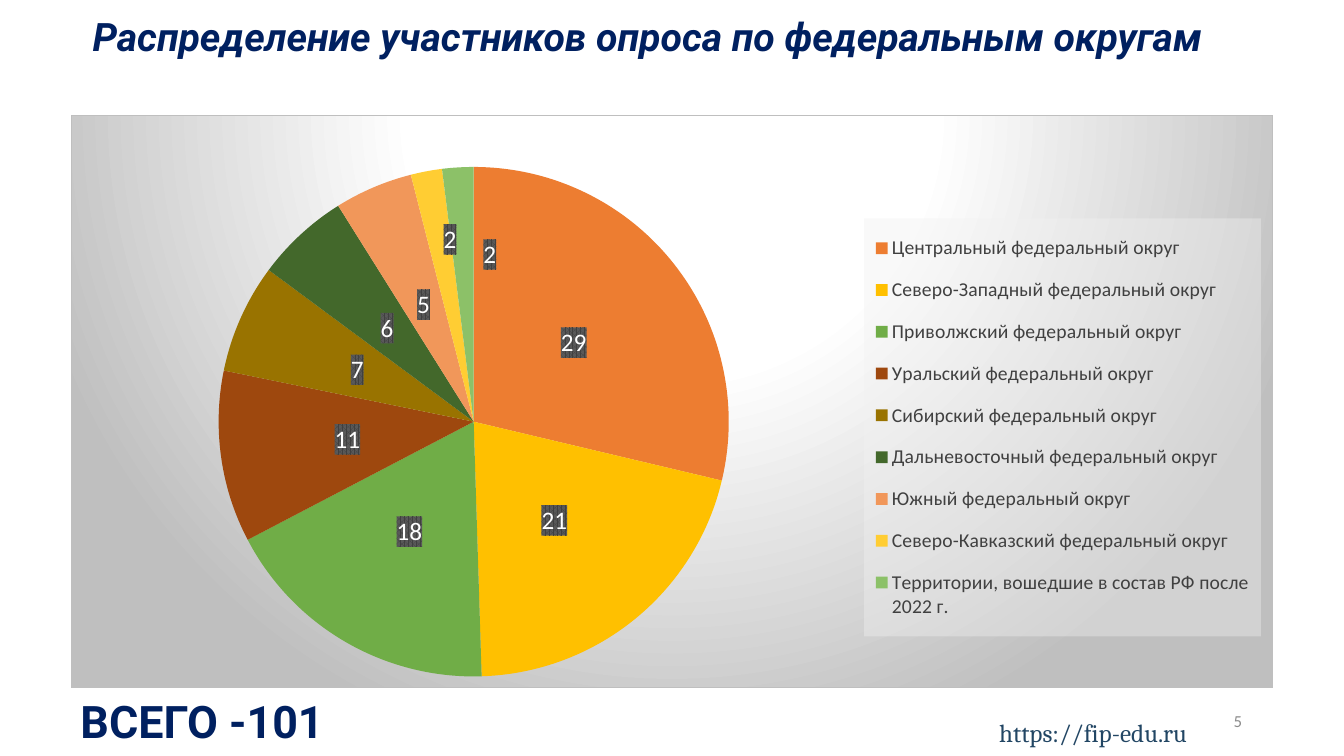
from dataclasses import dataclass
from lxml.etree import SubElement
from pptx import Presentation
from pptx.chart.data import CategoryChartData
from pptx.dml.color import RGBColor
from pptx.enum.chart import XL_CHART_TYPE, XL_LABEL_POSITION, XL_LEGEND_POSITION
from pptx.enum.text import MSO_ANCHOR, MSO_AUTO_SIZE, PP_ALIGN
from pptx.oxml import parse_xml
from pptx.oxml.ns import nsdecls, qn
from pptx.util import Inches, Pt


@dataclass(frozen=True)
class Theme:
    """Colours, fonts and type sizes of the slide."""
    navy: str = "002060"
    link: str = "224664"
    gray: str = "8C8C8C"
    ink: str = "404040"
    white: str = "FFFFFF"
    edge: str = "BFBFBF"
    pale: str = "F2F2F2"
    mesh: str = "595959"
    head: str = "Roboto"
    body: str = "Calibri"
    serif: str = "Cambria"
    title: int = 28
    total: int = 32
    label: int = 18
    legend: int = 14
    small: int = 12


THEME = Theme()
WIDE, HIGH = Inches(13.33), Inches(7.5)
SHARES = [
    ("Центральный федеральный округ", 29, "ED7D31"),
    ("Северо-Западный федеральный округ", 21, "FFC000"),
    ("Приволжский федеральный округ", 18, "70AD47"),
    ("Уральский федеральный округ", 11, "9E480E"),
    ("Сибирский федеральный округ", 7, "997300"),
    ("Дальневосточный федеральный округ", 6, "43682B"),
    ("Южный федеральный округ", 5, "F1975A"),
    ("Северо-Кавказский федеральный округ", 2, "FFCD33"),
    ("Территории, вошедшие в состав РФ после 2022 г.", 2, "8CC168"),
]
SHIFTS = {7: (0, -0.1), 8: (0.02, -0.07)}


def area(left, top, width, height):
    """Turn percentages of the slide into lengths."""
    return (int(WIDE * left / 100), int(HIGH * top / 100),
            int(WIDE * width / 100), int(HIGH * height / 100))


def style(font, size, color, face, bold=False, italic=False):
    """Format a font."""
    font.size, font.name, font.bold, font.italic = Pt(size), face, bold, italic
    font.color.rgb = RGBColor.from_string(color)


def write(shape, text, align=PP_ALIGN.LEFT, anchor=MSO_ANCHOR.TOP,
          line=None, after=None, **look):
    """Put formatted text into a shape."""
    frame = shape.text_frame
    frame.word_wrap, frame.auto_size = True, MSO_AUTO_SIZE.NONE
    frame.vertical_anchor = anchor
    para = frame.paragraphs[0]
    para.alignment, para.line_spacing, para.space_after = align, line, after
    run = para.add_run()
    run.text = text
    style(run.font, **look)


def note(slide, box, text, **look):
    """Add a text box."""
    write(slide.shapes.add_textbox(*area(*box)), text, **look)


def skin(fill, line="<a:ln><a:noFill/></a:ln>"):
    """Build chart shape properties from a fill and a line."""
    return parse_xml(f'<c:spPr {nsdecls("c", "a")}>{fill}{line}</c:spPr>')


def layout(**parts):
    """Build a manual chart layout."""
    root = parse_xml(f'<c:layout {nsdecls("c")}/>')
    manual = SubElement(root, qn("c:manualLayout"))
    for name, val in parts.items():
        SubElement(manual, qn(f"c:{name}")).set("val", str(val))
    return root


def frame(x, y, w, h, **first):
    """Build a layout in shares of the chart."""
    return layout(**first, xMode="edge", yMode="edge", x=x, y=y, w=w, h=h)


def solid(color, alpha):
    """Describe a see-through solid fill."""
    return (f'<a:solidFill><a:srgbClr val="{color}"><a:alpha val="{alpha}"/>'
            '</a:srgbClr></a:solidFill>')


def glow():
    """Describe the radial fill of the chart."""
    stops = [(0, THEME.white), (39000, THEME.white), (100000, THEME.edge)]
    marks = "".join(f'<a:gs pos="{pos}"><a:srgbClr val="{color}"/></a:gs>'
                    for pos, color in stops)
    return (f'<a:gradFill><a:gsLst>{marks}</a:gsLst><a:path path="circle">'
            '<a:fillToRect l="50000" t="-80000" r="50000" b="180000"/>'
            '</a:path></a:gradFill>')


def border():
    """Describe the outline of the chart."""
    return f'<a:ln w="9525"><a:solidFill><a:srgbClr val="{THEME.edge}"/></a:solidFill></a:ln>'


def tag(labels):
    """Format value labels and give them a dark patterned ground."""
    style(labels.font, THEME.label, THEME.white, THEME.body)
    labels.position = XL_LABEL_POSITION.CENTER


def ground(node):
    """Add the patterned ground to a label element."""
    fill = (f'<a:pattFill prst="pct75"><a:fgClr><a:srgbClr val="{THEME.ink}"/></a:fgClr>'
            f'<a:bgClr><a:srgbClr val="{THEME.mesh}"/></a:bgClr></a:pattFill>')
    node.find(qn("c:txPr")).addprevious(skin(fill))


def mark(plot):
    """Colour the slices and label them."""
    series = plot.series[0]
    labels = series.data_labels
    labels.show_value, labels.show_percentage = True, False
    tag(labels)
    for spot, (_, _, color) in enumerate(SHARES):
        fill = series.points[spot].format.fill
        fill.solid()
        fill.fore_color.rgb = RGBColor.from_string(color)
    for spot in SHIFTS:
        tag(series.points[spot].data_label)
    root = series.data_labels._element
    ground(root)
    for node in root.findall(qn("c:dLbl")):
        ground(node)
        index = node.find(qn("c:idx"))
        x, y = SHIFTS[int(index.get("val"))]
        index.addnext(layout(x=x, y=y))


def key(chart):
    """Place and format the legend."""
    chart.has_legend = True
    legend = chart.legend
    legend.position, legend.include_in_layout = XL_LEGEND_POSITION.RIGHT, False
    style(legend.font, THEME.legend, THEME.ink, THEME.body)
    node = chart.element.find(".//" + qn("c:legend"))
    for old in node.findall(qn("c:layout")):
        node.remove(old)
    node.find(qn("c:legendPos")).addnext(frame(0.66, 0.18, 0.33, 0.73))
    node.find(qn("c:txPr")).addprevious(skin(solid(THEME.pale, 39000)))


def pie(slide, box):
    """Add the pie chart of districts."""
    data = CategoryChartData()
    data.categories = [name for name, _, _ in SHARES]
    data.add_series("Series 1", [count for _, count, _ in SHARES])
    chart = slide.shapes.add_chart(XL_CHART_TYPE.PIE, *area(*box), data).chart
    chart.has_title = False
    style(chart.font, THEME.small, THEME.ink, THEME.body)
    plot = chart.plots[0]
    plot.vary_by_categories = True
    mark(plot)
    key(chart)
    zone = chart.element.find(".//" + qn("c:plotArea"))
    for old in zone.findall(qn("c:layout")):
        zone.remove(old)
    zone.insert(0, frame(0.12, 0.09, 0.43, 0.89, layoutTarget="inner"))
    chart.element.find(qn("c:chart")).addnext(skin(glow(), border()))


def main():
    """Build and save the slide."""
    deck = Presentation()
    deck.slide_width, deck.slide_height = WIDE, HIGH
    slide = deck.slides.add_slide(deck.slide_layouts[5])
    title = slide.shapes.title
    title.left, title.top, title.width, title.height = area(5.25, 0, 85.8, 15.47)
    write(title, "Распределение участников опроса по федеральным округам",
          align=PP_ALIGN.CENTER, line=1.15, after=Pt(8), size=THEME.title,
          color=THEME.navy, face=THEME.head, bold=True, italic=True)
    pie(slide, (5.25, 15.2, 89.5, 75.87))
    note(slide, (5.25, 91.07, 42.5, 8.53), "ВСЕГО -101", size=THEME.total,
         color=THEME.navy, face=THEME.head, bold=True)
    note(slide, (73.6, 94.27, 17.5, 5.33), "https://fip-edu.ru",
         size=THEME.label, color=THEME.link, face=THEME.serif)
    note(slide, (70.67, 92.67, 22.5, 5.33), "5", align=PP_ALIGN.RIGHT,
         anchor=MSO_ANCHOR.MIDDLE, size=THEME.small, color=THEME.gray, face=THEME.body)
    deck.save("out.pptx")


if __name__ == "__main__":
    main()
